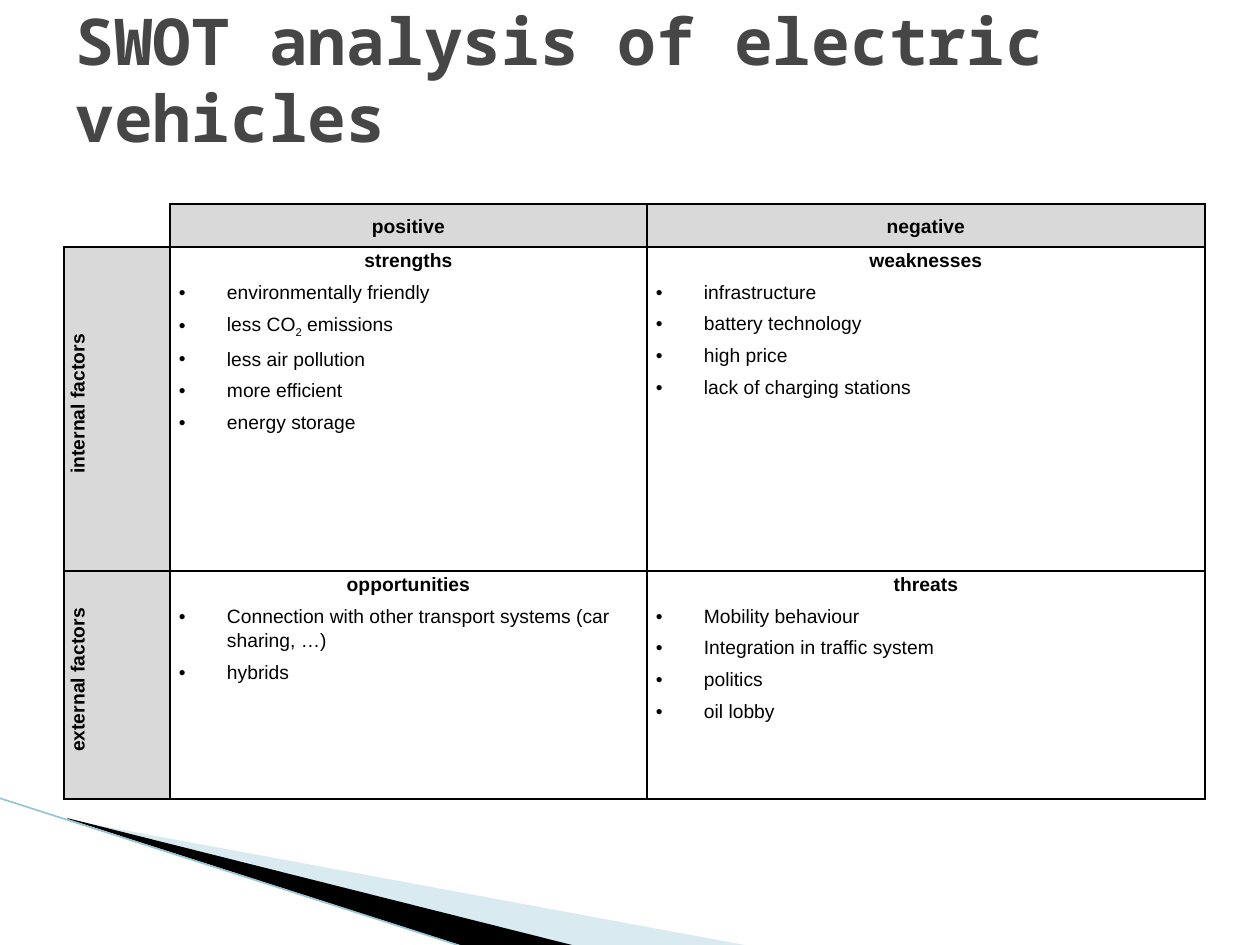
import pptx
import pptx.util
import pptx.dml.color
import pptx.enum.shapes
import pptx.enum.text
import pptx.oxml
import pptx.oxml.ns

SCALE = 914400 / 126
INK = {"title": "464646", "text": "000000", "head": "D9D9D9",
       "pale": "A0CBDC", "dark": "000000", "edge": "97C5D8"}
ALIGN = pptx.enum.text.PP_ALIGN
MIDDLE = pptx.enum.text.MSO_ANCHOR.MIDDLE
TOP = pptx.enum.text.MSO_ANCHOR.TOP


def px(count):
    return pptx.util.Emu(round(count * SCALE))


def rgb(name):
    return pptx.dml.color.RGBColor.from_string(INK[name])


def put(item, values):
    for name, value in values.items():
        setattr(item, name, value)


def node(parent, tag, **attrs):
    child = parent.makeelement(pptx.oxml.ns.qn("a:" + tag), attrs)
    parent.append(child)
    return child


class Deck:
    """Holds the style and the current slide, and draws each kind of element."""

    def __init__(self, wide, high):
        self.show = pptx.Presentation()
        put(self.show, {"slide_width": px(wide), "slide_height": px(high)})
        self.slide = self.show.slides.add_slide(self.show.slide_layouts[6])
        self.shapes = self.slide.shapes
        self.body = {"name": "Arial", "size": pptx.util.Pt(11)}
        self.space = {"line_spacing": 1.15, "space_after": pptx.util.Pt(2)}

    def wedge(self, points, ink, alpha=None):
        form = self.shapes.build_freeform(*points[0], scale=SCALE)
        form.add_line_segments(points[1:], close=True)
        shape = form.convert_to_shape()
        shape.shadow.inherit = False
        shape.line.fill.background()
        shape.fill.solid()
        shape.fill.fore_color.rgb = rgb(ink)
        if alpha:
            tint = shape._element.spPr.find(".//" + pptx.oxml.ns.qn("a:srgbClr"))
            node(tint, "alpha", val=str(alpha * 1000))

    def line(self, start, end, ink, width):
        kind = pptx.enum.shapes.MSO_CONNECTOR.STRAIGHT
        link = self.shapes.add_connector(kind, *map(px, start + end))
        link.line.color.rgb = rgb(ink)
        link.line.width = pptx.util.Pt(width)
        node(link._element.spPr, "effectLst")

    def title(self, text, box, size, foot):
        frame = self.shapes.add_textbox(*map(px, box)).text_frame
        put(frame, {"word_wrap": True, "vertical_anchor": MIDDLE,
                    "margin_top": 0, "margin_bottom": px(foot)})
        run = frame.paragraphs[0].add_run()
        run.text = text
        put(run.font, {"name": "Noto Sans Mono", "size": pptx.util.Pt(size), "bold": True})
        run.font.color.rgb = rgb("title")

    def table(self, spot, cols, rows):
        area = (*spot, sum(cols), sum(rows))
        grid = self.shapes.add_table(len(rows), len(cols), *map(px, area)).table
        put(grid, {"first_row": False, "horz_banding": False})
        for col, wide in zip(grid.columns, cols):
            col.width = px(wide)
        for row, high in zip(grid.rows, rows):
            row.height = px(high)
        return grid

    def cell(self, cell, sides="LRTB", fill=None, anchor=TOP):
        put(cell, {"margin_left": px(9), "margin_right": px(9), "margin_top": 0,
                   "margin_bottom": 0, "vertical_anchor": anchor})
        prop = cell._tc.get_or_add_tcPr()
        for side in "LRTB":
            edge = node(prop, "ln" + side, w="12700")
            if side in sides:
                node(node(edge, "solidFill"), "srgbClr", val=INK["text"])
            else:
                node(edge, "noFill")
        if fill:
            cell.fill.solid()
            cell.fill.fore_color.rgb = rgb(fill)
        else:
            cell.fill.background()

    def words(self, para, text, align, bold=False):
        put(para, {**self.space, "alignment": align})
        for spot, part in enumerate(text.split("_")):
            run = para.add_run()
            run.text = part
            put(run.font, {**self.body, "bold": bold})
            run.font.color.rgb = rgb("text")
            if spot % 2:
                run._r.get_or_add_rPr().set("baseline", "-25000")

    def label(self, cell, text, turn=False):
        self.cell(cell, fill="head", anchor=MIDDLE)
        para = cell.text_frame.paragraphs[0]
        self.words(para, text, ALIGN.CENTER, True)
        if turn:
            cell._tc.get_or_add_tcPr().set("vert", "vert270")
            para._p.get_or_add_pPr().set("marL", str(px(10)))

    def points(self, cell, head, items, align):
        self.cell(cell)
        frame = cell.text_frame
        self.words(frame.paragraphs[0], head, ALIGN.CENTER, True)
        for item in items:
            para = frame.add_paragraph()
            para.space_before = pptx.util.Pt(2)
            self.words(para, item, align)
            prop = para._p.get_or_add_pPr()
            prop.set("marL", str(px(48)))
            prop.set("indent", str(-px(48)))
            node(prop, "buFont", typeface="Arial")
            node(prop, "buChar", char="•")


def main():
    deck = Deck(1260, 945)
    deck.wedge([(69, 820), (750, 946), (575, 946), (69, 819)], "pale", 40)
    deck.wedge([(67, 818), (576, 946), (469, 948), (68, 819)], "dark")
    deck.line((-1, 798), (467, 948), "edge", 0.95)

    grid = deck.table((64, 204), (106, 477, 558), (43, 324, 228))
    deck.cell(grid.cell(0, 0), sides="RB")
    for col, text in enumerate(("positive", "negative"), 1):
        deck.label(grid.cell(0, col), text)
    swot = (
        ("internal factors",
         ("strengths", ("environmentally friendly", "less CO_2_ emissions",
                        "less air pollution", "more efficient", "energy storage"),
          ALIGN.JUSTIFY),
         ("weaknesses", ("infrastructure", "battery technology", "high price",
                         "lack of charging stations"), ALIGN.JUSTIFY)),
        ("external factors",
         ("opportunities", ("Connection with other transport systems (car sharing, …)",
                            "hybrids"), ALIGN.LEFT),
         ("threats", ("Mobility behaviour", "Integration in traffic system",
                      "politics", "oil lobby"), ALIGN.JUSTIFY)),
    )
    for row, (side, *parts) in enumerate(swot, 1):
        deck.label(grid.cell(row, 0), side, turn=True)
        for col, part in enumerate(parts, 1):
            deck.points(grid.cell(row, col), *part)

    deck.title("SWOT analysis of electric vehicles", (63, 38, 1134, 157), 36.9, 77)
    deck.show.save("out.pptx")


if __name__ == "__main__":
    main()
